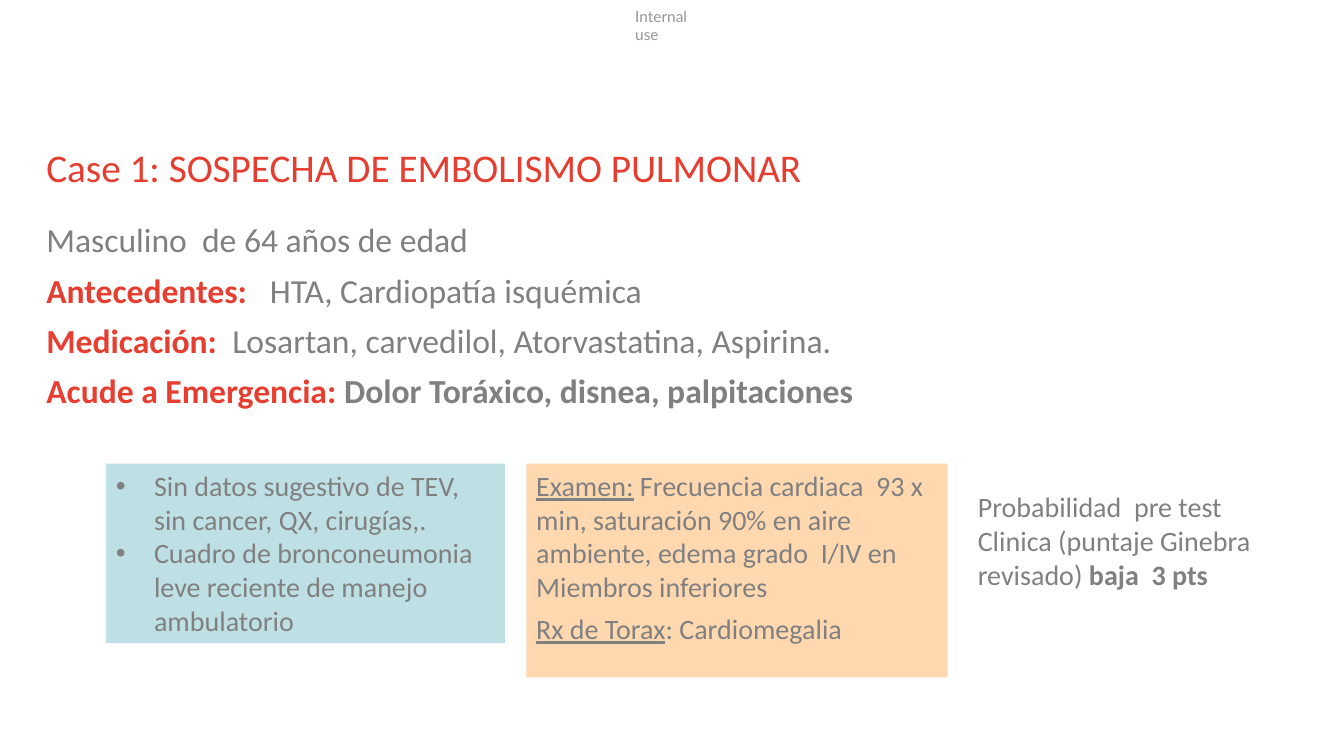
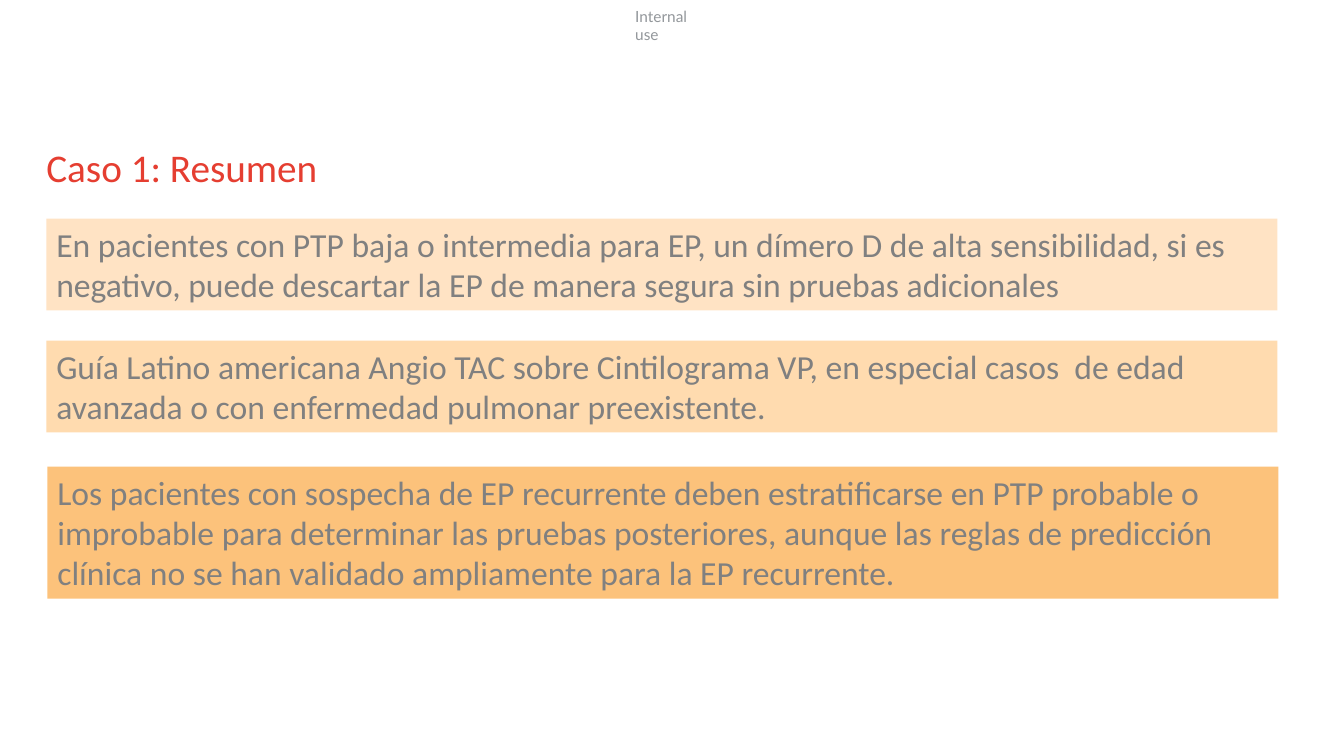
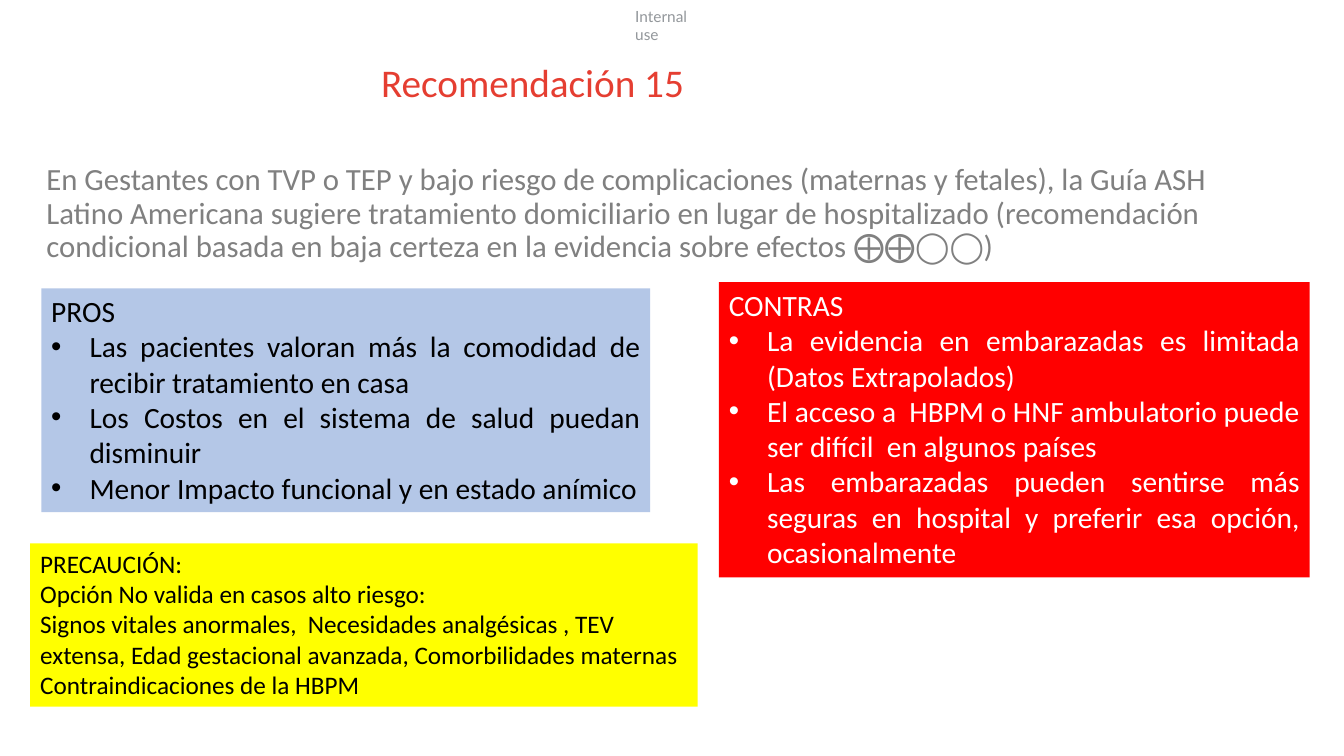
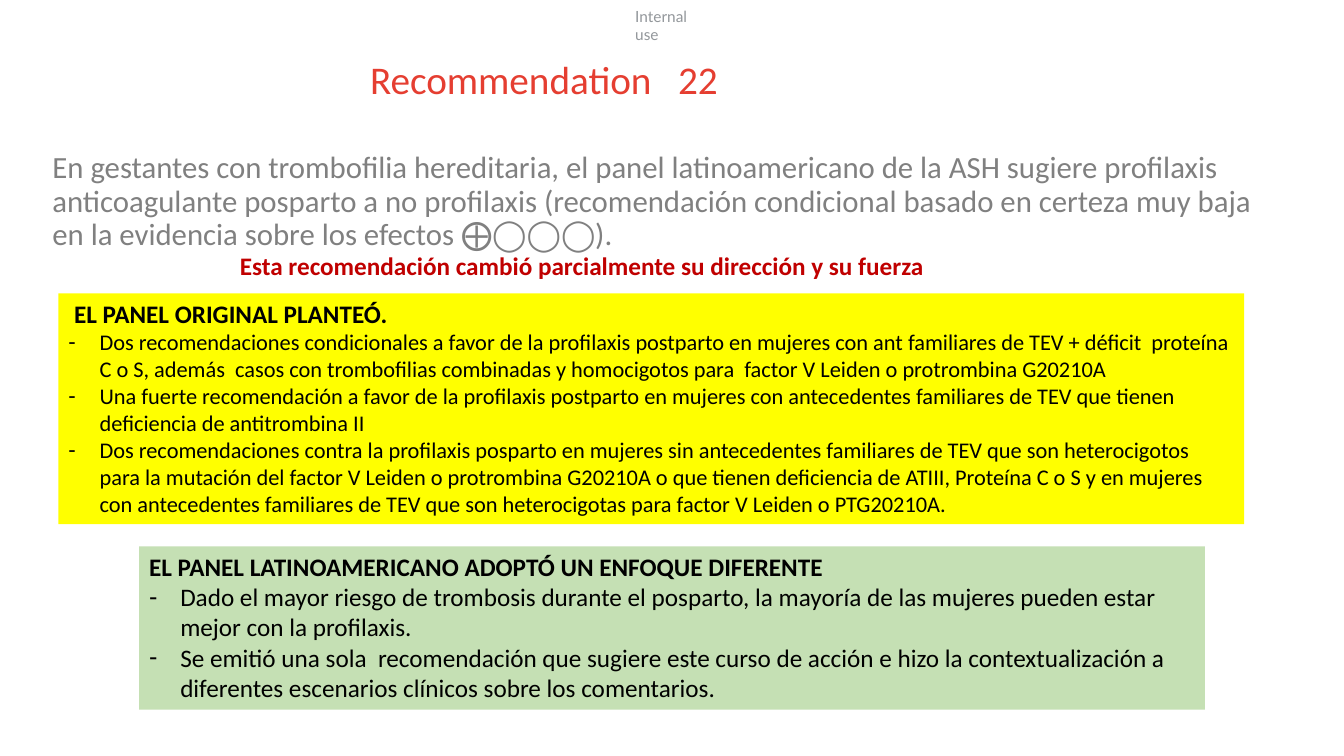
"""Build four clinical slides on pulmonary embolism and anticoagulation in pregnancy."""
from dataclasses import dataclass
from typing import Any, NamedTuple, Optional

from lxml import etree
from pptx import Presentation
from pptx import util as u
from pptx.dml import color
from pptx.enum import shapes, text
from pptx.oxml import ns


@dataclass(frozen=True)
class Theme:
    font: str = "Calibri"
    label_font: str = "Lato"
    title: str = "E53E31"
    key: str = "E63E31"
    body: str = "808080"
    label: str = "93979B"
    alert: str = "C00000"
    black: str = "000000"
    white: str = "FFFFFF"
    teal: str = "BEE0E4"
    peach: str = "FFD8B0"
    peach_steps: tuple[str, ...] = ("FFE3C4", "FFDBAF", "FCC27B")
    blue: str = "B4C7E7"
    red: str = "FF0000"
    yellow: str = "FFFF00"
    green: str = "C5E0B4"
    title_size: float = 28
    large: float = 24
    statement: float = 22
    list_size: float = 21
    medium: float = 20
    small: float = 18
    detail: float = 16
    label_size: float = 11


THEME = Theme()


class Box(NamedTuple):
    left: float
    top: float
    width: float
    height: float


@dataclass(frozen=True)
class Run:
    text: str
    bold: bool = False
    underline: bool = False
    color: Optional[str] = None


@dataclass(frozen=True)
class Para:
    runs: tuple[Run, ...]
    bullet: str = ""
    size: Optional[float] = None


@dataclass(frozen=True)
class Style:
    size: float
    color: str = THEME.body
    font: str = THEME.font
    justify: bool = False
    line_spacing: Optional[float] = None
    before: float = 0
    after: float = 0


@dataclass(frozen=True)
class Panel:
    box: Box
    paras: tuple[Para, ...]
    style: Style
    fill: Optional[str] = None
    margins: bool = True


@dataclass(frozen=True)
class SlideContent:
    title: str
    title_box: Box
    panels: tuple[Panel, ...]
    body: Optional[Panel] = None


BULLET_INDENT = {"": 0, "•": 0.38, "-": 0.31}
CASE_TITLE_BOX = Box(0.46, 1.47, 12, 0.46)


def plain(content: str) -> Para:
    """Make a paragraph of one regular run."""
    return Para((Run(content),))


def heading(content: str) -> Para:
    """Make a paragraph of one bold run."""
    return Para((Run(content, bold=True),))


def fact(name: str, value: str, bold: bool = False) -> Para:
    """Make a paragraph with a highlighted name and its value."""
    return Para((Run(name, bold=True, color=THEME.key), Run(value, bold=bold)))


def finding(name: str, value: str) -> Para:
    """Make a paragraph with an underlined name and its value."""
    return Para((Run(name, underline=True), Run(value)))


def items(bullet: str, *contents: str, size: Optional[float] = None) -> tuple[Para, ...]:
    """Make one bulleted paragraph for each text."""
    return tuple(Para((Run(content),), bullet, size) for content in contents)


def lengths(box: Box) -> list[u.Length]:
    """Convert a box to slide lengths."""
    return [u.Inches(value) for value in box]


def set_bullet(paragraph: Any, bullet: str) -> None:
    """Give a paragraph its bullet and hanging indent."""
    properties = paragraph._p.get_or_add_pPr()
    indent = u.Inches(BULLET_INDENT[bullet])
    properties.set("marL", str(indent))
    properties.set("indent", str(-indent))
    if bullet:
        etree.SubElement(properties, ns.qn("a:buFont")).set("typeface", "Arial")
        etree.SubElement(properties, ns.qn("a:buChar")).set("char", bullet)
    else:
        etree.SubElement(properties, ns.qn("a:buNone"))


def write(shape: Any, paras: tuple[Para, ...], style: Style, margins: bool = True) -> None:
    """Write paragraphs into a shape run by run."""
    frame = shape.text_frame
    frame.word_wrap = True
    frame.auto_size = text.MSO_AUTO_SIZE.NONE
    frame.vertical_anchor = text.MSO_ANCHOR.TOP
    if not margins:
        frame.margin_left = frame.margin_right = frame.margin_top = frame.margin_bottom = 0
    for index, para in enumerate(paras):
        paragraph = frame.add_paragraph() if index else frame.paragraphs[0]
        set_bullet(paragraph, para.bullet)
        paragraph.alignment = text.PP_ALIGN.JUSTIFY if style.justify else text.PP_ALIGN.LEFT
        paragraph.space_before = u.Pt(style.before if index else 0)
        paragraph.space_after = u.Pt(style.after)
        if style.line_spacing:
            paragraph.line_spacing = style.line_spacing
        for part in para.runs:
            run = paragraph.add_run()
            run.text = part.text
            run.font.name = style.font
            run.font.size = u.Pt(para.size or style.size)
            run.font.bold = part.bold
            run.font.underline = part.underline
            run.font.color.rgb = color.RGBColor.from_string(part.color or style.color)


def place(placeholder: Any, box: Box) -> None:
    """Move a placeholder to a box."""
    placeholder.left, placeholder.top, placeholder.width, placeholder.height = lengths(box)


def draw_panel(slide: Any, panel: Panel) -> Any:
    """Draw a filled rectangle or a plain text box."""
    if panel.fill:
        area = slide.shapes.add_shape(shapes.MSO_SHAPE.RECTANGLE, *lengths(panel.box))
        area.shadow.inherit = False
        area.fill.solid()
        area.fill.fore_color.rgb = color.RGBColor.from_string(panel.fill)
        area.line.fill.background()
    else:
        area = slide.shapes.add_textbox(*lengths(panel.box))
    write(area, panel.paras, panel.style, panel.margins)
    return area


def draw_slide(deck: Any, content: SlideContent) -> Any:
    """Add a slide with its title, body and panels."""
    slide = deck.slides.add_slide(deck.slide_layouts[1 if content.body else 5])
    place(slide.shapes.title, content.title_box)
    write(slide.shapes.title, (plain(content.title),), TITLE_STYLE, margins=False)
    if content.body:
        body = slide.placeholders[1]
        place(body, content.body.box)
        write(body, content.body.paras, content.body.style, margins=False)
    for panel in content.panels:
        draw_panel(slide, panel)
    return slide


def share_label(deck: Any, slide: Any) -> None:
    """Put the classification label on the slide master."""
    label = draw_panel(slide, CLASSIFICATION)
    label.element.nvSpPr.cNvPr.set("id", "20")
    deck.slide_master.shapes.element.append(label.element)


TITLE_STYLE = Style(THEME.title_size, THEME.title, line_spacing=0.9)
CASE_STYLE = Style(THEME.large, line_spacing=0.9, before=10)
STATEMENT_STYLE = Style(THEME.statement, line_spacing=0.9)
SUMMARY_STYLE = Style(THEME.large)
NOTE_STYLE = Style(THEME.medium)
EXAM_STYLE = Style(THEME.medium, after=6)
PROS_STYLE = Style(THEME.list_size, THEME.black, justify=True)
CONS_STYLE = Style(THEME.list_size, THEME.white, justify=True)
BLACK_STYLE = Style(THEME.small, THEME.black)

CLASSIFICATION = Panel(
    Box(6.3, 0.07, 0.78, 0.18),
    (plain("Internal use"),),
    Style(THEME.label_size, THEME.label, THEME.label_font),
    margins=False,
)

CASE = SlideContent(
    "Case 1: SOSPECHA DE EMBOLISMO PULMONAR",
    CASE_TITLE_BOX,
    (
        Panel(
            Box(1.05, 4.6, 3.96, 1.78),
            items(
                "•",
                "Sin datos sugestivo de TEV, sin cancer, QX, cirugías,.",
                "Cuadro de bronconeumonia leve reciente de manejo ambulatorio",
            ),
            NOTE_STYLE,
            THEME.teal,
        ),
        Panel(
            Box(5.22, 4.6, 4.18, 2.12),
            (
                finding(
                    "Examen:",
                    " Frecuencia cardiaca  93 x min, saturación 90% en aire ambiente, "
                    "edema grado  I/IV en Miembros inferiores",
                ),
                finding("Rx de Torax", ": Cardiomegalia"),
            ),
            EXAM_STYLE,
            THEME.peach,
        ),
        Panel(
            Box(9.6, 4.81, 3.07, 1.11),
            (
                Para((
                    Run("Probabilidad  pre test Clinica (puntaje Ginebra revisado) "),
                    Run("baja  3 pts", bold=True),
                )),
            ),
            NOTE_STYLE,
        ),
    ),
    Panel(
        Box(0.46, 2.22, 12, 4.32),
        (
            plain("Masculino  de 64 años de edad"),
            fact("Antecedentes:   ", "HTA, Cardiopatía isquémica"),
            fact("Medicación:  ", "Losartan, carvedilol, Atorvastatina, Aspirina."),
            fact("Acude a Emergencia: ", "Dolor Toráxico, disnea, palpitaciones", bold=True),
        ),
        CASE_STYLE,
    ),
)

SUMMARY_BOXES = (
    Box(0.46, 2.17, 12.21, 0.91),
    Box(0.46, 3.38, 12.21, 0.91),
    Box(0.47, 4.63, 12.21, 1.31),
)
SUMMARY_TEXTS = (
    "En pacientes con PTP baja o intermedia para EP, un dímero D de alta sensibilidad, "
    "si es negativo, puede descartar la EP de manera segura sin pruebas adicionales",
    "Guía Latino americana Angio TAC sobre Cintilograma VP, en especial casos  de edad "
    "avanzada o con enfermedad pulmonar preexistente.",
    "Los pacientes con sospecha de EP recurrente deben estratificarse en PTP probable o "
    "improbable para determinar las pruebas posteriores, aunque las reglas de predicción "
    "clínica no se han validado ampliamente para la EP recurrente.",
)
SUMMARY = SlideContent(
    "Caso 1: Resumen",
    CASE_TITLE_BOX,
    tuple(
        Panel(box, (plain(content),), SUMMARY_STYLE, fill)
        for box, content, fill in zip(SUMMARY_BOXES, SUMMARY_TEXTS, THEME.peach_steps)
    ),
)

HOME_TREATMENT = SlideContent(
    "Recomendación 15",
    Box(3.78, 0.63, 6.45, 0.46),
    (
        Panel(
            Box(0.41, 2.86, 6.04, 2.22),
            (plain("PROS"),) + items(
                "•",
                "Las pacientes valoran más la comodidad de recibir tratamiento en casa",
                "Los Costos en el sistema de salud puedan disminuir",
                "Menor Impacto funcional y en estado anímico",
            ),
            PROS_STYLE,
            THEME.blue,
        ),
        Panel(
            Box(7.13, 2.8, 5.86, 2.93),
            (plain("CONTRAS"),) + items(
                "•",
                "La evidencia en embarazadas es limitada (Datos Extrapolados)",
                "El acceso a  HBPM o HNF ambulatorio puede ser difícil  en algunos países",
                "Las embarazadas pueden sentirse más seguras en hospital y preferir esa opción, "
                "ocasionalmente",
            ),
            CONS_STYLE,
            THEME.red,
        ),
        Panel(
            Box(0.3, 5.39, 6.62, 1.62),
            items(
                "",
                "PRECAUCIÓN:",
                "Opción No valida en casos alto riesgo:",
                "Signos vitales anormales,  Necesidades analgésicas , TEV extensa, "
                "Edad gestacional avanzada, Comorbilidades maternas",
                "Contraindicaciones de la HBPM",
            ),
            BLACK_STYLE,
            THEME.yellow,
        ),
    ),
    Panel(
        Box(0.46, 1.63, 12, 1.24),
        (
            plain(
                "En Gestantes con TVP o TEP y bajo riesgo de complicaciones (maternas y fetales), "
                "la Guía ASH Latino Americana sugiere tratamiento domiciliario en lugar de "
                "hospitalizado (recomendación condicional basada en baja certeza en la evidencia "
                "sobre efectos ⨁⨁◯◯)"
            ),
        ),
        STATEMENT_STYLE,
    ),
)

PROPHYLAXIS = SlideContent(
    "Recommendation   22",
    Box(3.67, 0.6, 5.93, 0.46),
    (
        Panel(
            Box(0.58, 2.91, 11.76, 2.29),
            (heading(" EL PANEL ORIGINAL PLANTEÓ."),) + items(
                "-",
                "Dos recomendaciones condicionales a favor de la profilaxis postparto en mujeres "
                "con ant familiares de TEV + déficit  proteína C o S, además  casos con "
                "trombofilias combinadas y homocigotos para  factor V Leiden o protrombina G20210A",
                "Una fuerte recomendación a favor de la profilaxis postparto en mujeres con "
                "antecedentes familiares de TEV que tienen deficiencia de antitrombina II",
                "Dos recomendaciones contra la profilaxis posparto en mujeres sin antecedentes "
                "familiares de TEV que son heterocigotos para la mutación del factor V Leiden o "
                "protrombina G20210A o que tienen deficiencia de ATIII, Proteína C o S y en mujeres "
                "con antecedentes familiares de TEV que son heterocigotas para factor V Leiden o "
                "PTG20210A.",
                size=THEME.detail,
            ),
            BLACK_STYLE,
            THEME.yellow,
        ),
        Panel(
            Box(2.28, 2.43, 8.77, 0.4),
            (heading("Esta recomendación cambió parcialmente su dirección y su fuerza"),),
            Style(THEME.small, THEME.alert),
        ),
        Panel(
            Box(1.38, 5.42, 10.57, 1.62),
            (heading("EL PANEL LATINOAMERICANO ADOPTÓ UN ENFOQUE DIFERENTE"),) + items(
                "-",
                "Dado el mayor riesgo de trombosis durante el posparto, la mayoría de las mujeres "
                "pueden estar mejor con la profilaxis.",
                "Se emitió una sola  recomendación que sugiere este curso de acción e hizo la "
                "contextualización a diferentes escenarios clínicos sobre los comentarios.",
            ),
            BLACK_STYLE,
            THEME.green,
        ),
    ),
    Panel(
        Box(0.52, 1.51, 12, 1.02),
        (
            plain(
                "En gestantes con trombofilia hereditaria, el panel latinoamericano de la ASH "
                "sugiere profilaxis anticoagulante posparto a no profilaxis (recomendación "
                "condicional basado en certeza muy baja en la evidencia sobre los efectos ⨁◯◯◯)."
            ),
        ),
        STATEMENT_STYLE,
    ),
)


def main() -> None:
    """Build and save the deck."""
    deck = Presentation()
    deck.slide_width, deck.slide_height = u.Inches(13.33), u.Inches(7.5)
    slides = [draw_slide(deck, content) for content in (CASE, SUMMARY, HOME_TREATMENT, PROPHYLAXIS)]
    share_label(deck, slides[0])
    deck.save("out.pptx")


if __name__ == "__main__":
    main()
